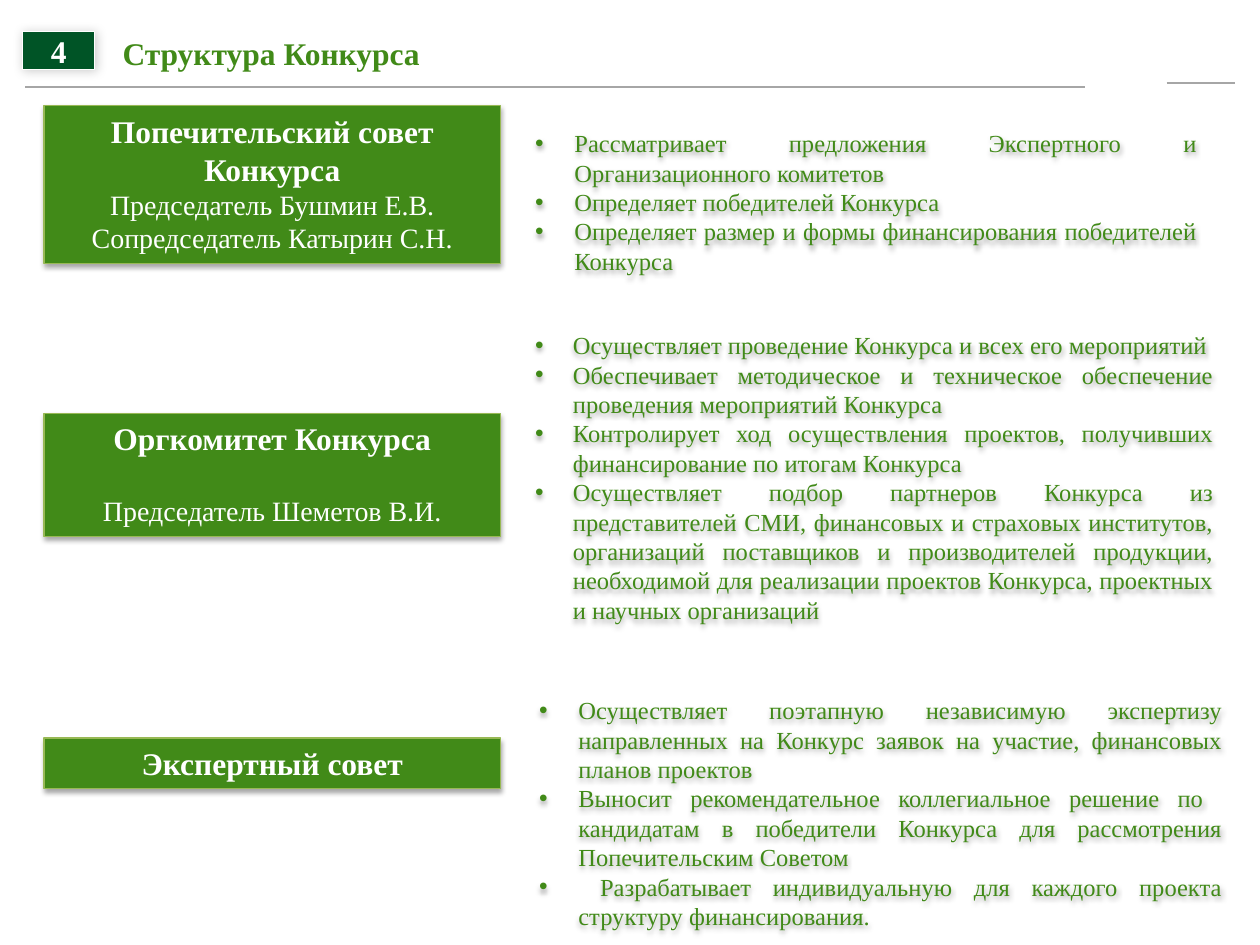
from lxml import etree
from pptx import Presentation
from pptx import util as u
from pptx.dml.color import RGBColor
from pptx.enum import shapes, text
from pptx.oxml.ns import qn

FONT = "Times New Roman"
GREEN, DARK_GREEN, LIME = "418A18", "005426", "98B955"
WHITE, GREY = "FFFFFF", "A6A6A6"
CARD_SHADOW = (35, 3.1, 1.8, 90)
BADGE_SHADOW = (20, 6, 1, 45)
CARD_LEFT, CARD_WIDTH = 0.89, 9.2

COUNCILS = [
    dict(
        top=2.13, height=3.18, heading="Попечительский совет Конкурса", gap=0,
        people=["Председатель Бушмин Е.В.", "Сопредседатель Катырин С.Н."],
        duties_box=(10.54, 2.46, 13.84, 3.25), indent=0.79,
        duties=[
            "Рассматривает предложения Экспертного и Организационного комитетов",
            "Определяет победителей Конкурса",
            "Определяет размер и формы финансирования победителей Конкурса",
        ],
    ),
    dict(
        top=8.33, height=2.49, heading="Оргкомитет Конкурса", gap=20.7,
        people=["Председатель Шеметов В.И."],
        duties_box=(10.54, 6.53, 14.17, 6.25), indent=0.76,
        duties=[
            "Осуществляет проведение Конкурса и всех его мероприятий",
            "Обеспечивает методическое и техническое обеспечение проведения "
            "мероприятий Конкурса",
            "Контролирует ход осуществления проектов, получивших "
            "финансирование по итогам Конкурса",
            "Осуществляет подбор партнеров Конкурса из представителей СМИ, "
            "финансовых и страховых институтов, организаций поставщиков и "
            "производителей продукции, необходимой для реализации проектов "
            "Конкурса, проектных и научных организаций",
        ],
    ),
    dict(
        top=14.88, height=1.02, heading="Экспертный совет", gap=0, people=[],
        duties_box=(10.62, 13.89, 14.27, 5.05), indent=0.79,
        duties=[
            "Осуществляет поэтапную независимую экспертизу направленных на "
            "Конкурс заявок на участие, финансовых планов проектов",
            "Выносит рекомендательное коллегиальное решение по  кандидатам в "
            "победители Конкурса для рассмотрения Попечительским Советом",
            " Разрабатывает индивидуальную для каждого проекта структуру "
            "финансирования.",
        ],
    ),
]


def color(value):
    return RGBColor.from_string(value)


def lengths(box):
    return [u.Cm(value) for value in box]


def add_shadow(shape, opacity, blur, distance, angle):
    shape.shadow.inherit = False
    effects = shape._element.spPr.find(qn("a:effectLst"))
    shadow = etree.SubElement(
        effects, qn("a:outerShdw"), blurRad=str(u.Pt(blur)),
        dist=str(u.Pt(distance)), dir=str(angle * 60000), rotWithShape="0")
    tint = etree.SubElement(shadow, qn("a:srgbClr"), val="000000")
    etree.SubElement(tint, qn("a:alpha"), val=str(opacity * 1000))


def add_span(para, words, size, tint, bold=False):
    span = para.add_run()
    span.text = words
    span.font.name = FONT
    span.font.size = u.Pt(size)
    span.font.bold = bold
    span.font.color.rgb = color(tint)


def next_para(frame, index):
    return frame.add_paragraph() if index else frame.paragraphs[0]


def clear_margins(frame):
    frame.margin_left = frame.margin_right = 0
    frame.margin_top = frame.margin_bottom = 0
    frame.vertical_anchor = text.MSO_ANCHOR.MIDDLE


def add_panel(page, box, fill, line, shadow):
    panel = page.shapes.add_shape(shapes.MSO_SHAPE.RECTANGLE, *lengths(box))
    panel.fill.solid()
    panel.fill.fore_color.rgb = color(fill)
    panel.line.color.rgb = color(line)
    panel.line.width = u.Pt(0.75)
    add_shadow(panel, *shadow)
    panel.text_frame.word_wrap = True
    return panel.text_frame


def add_rule(page, left, right, top):
    rule = page.shapes.add_connector(
        shapes.MSO_CONNECTOR.STRAIGHT, *lengths((left, top, right, top)))
    rule.line.color.rgb = color(GREY)
    rule.line.width = u.Pt(1)
    etree.SubElement(rule._element.spPr, qn("a:effectLst"))


def add_header(page, left, top):
    add_rule(page, left + 0.05, left + 21.41, top + 1.11)
    add_rule(page, left + 23.06, left + 24.43, top + 1.04)

    title = page.shapes.title
    title.left, title.top, title.width, title.height = lengths(
        (left + 2.01, top + 0.05, 8, 0.76))
    frame = title.text_frame
    clear_margins(frame)
    frame.word_wrap = True
    frame.paragraphs[0].alignment = text.PP_ALIGN.LEFT
    add_span(frame.paragraphs[0], "Структура Конкурса", 18, GREEN, True)

    badge = add_panel(page, (left, top, 1.45, 0.76), DARK_GREEN, WHITE, BADGE_SHADOW)
    clear_margins(badge)
    badge.paragraphs[0].alignment = text.PP_ALIGN.CENTER
    add_span(badge.paragraphs[0], "4", 18, WHITE, True)


def add_card(page, box, heading, people, gap):
    frame = add_panel(page, box, GREEN, LIME, CARD_SHADOW)
    frame.vertical_anchor = text.MSO_ANCHOR.TOP
    for index, words in enumerate([heading, *people]):
        para = next_para(frame, index)
        para.alignment = text.PP_ALIGN.CENTER
        if index == 1 and gap:
            para.space_before = u.Pt(gap)
        add_span(para, words, 16 if index else 18, WHITE, index == 0)


def add_duties(page, box, duties, indent):
    area = page.shapes.add_textbox(*lengths(box))
    add_shadow(area, *CARD_SHADOW)
    frame = area.text_frame
    frame.word_wrap = True
    for index, words in enumerate(duties):
        para = next_para(frame, index)
        para.alignment = text.PP_ALIGN.JUSTIFY
        props = para._p.get_or_add_pPr()
        props.set("marL", str(u.Cm(indent)))
        props.set("indent", str(-u.Cm(indent)))
        etree.SubElement(props, qn("a:buFont"), typeface="Arial")
        etree.SubElement(props, qn("a:buChar"), char="•")
        add_span(para, words, 14, GREEN)


def main():
    deck = Presentation()
    deck.slide_width, deck.slide_height = u.Cm(25.4), u.Cm(19.05)
    page = deck.slides.add_slide(deck.slide_layouts[5])
    add_header(page, 0.46, 0.64)
    for council in COUNCILS:
        card_box = (CARD_LEFT, council["top"], CARD_WIDTH, council["height"])
        add_card(page, card_box, council["heading"], council["people"], council["gap"])
        add_duties(page, council["duties_box"], council["duties"], council["indent"])
    deck.save("out.pptx")


if __name__ == "__main__":
    main()
